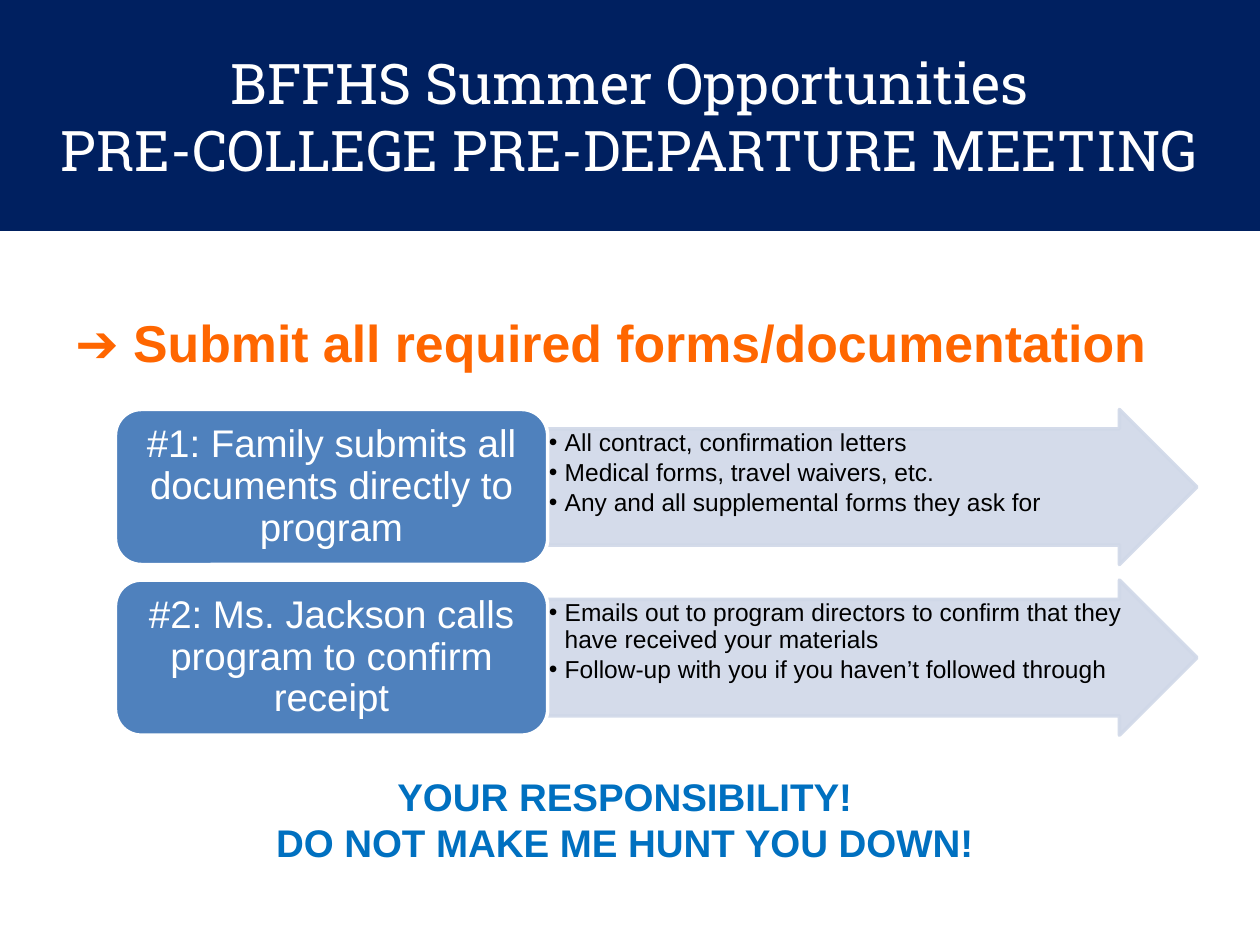
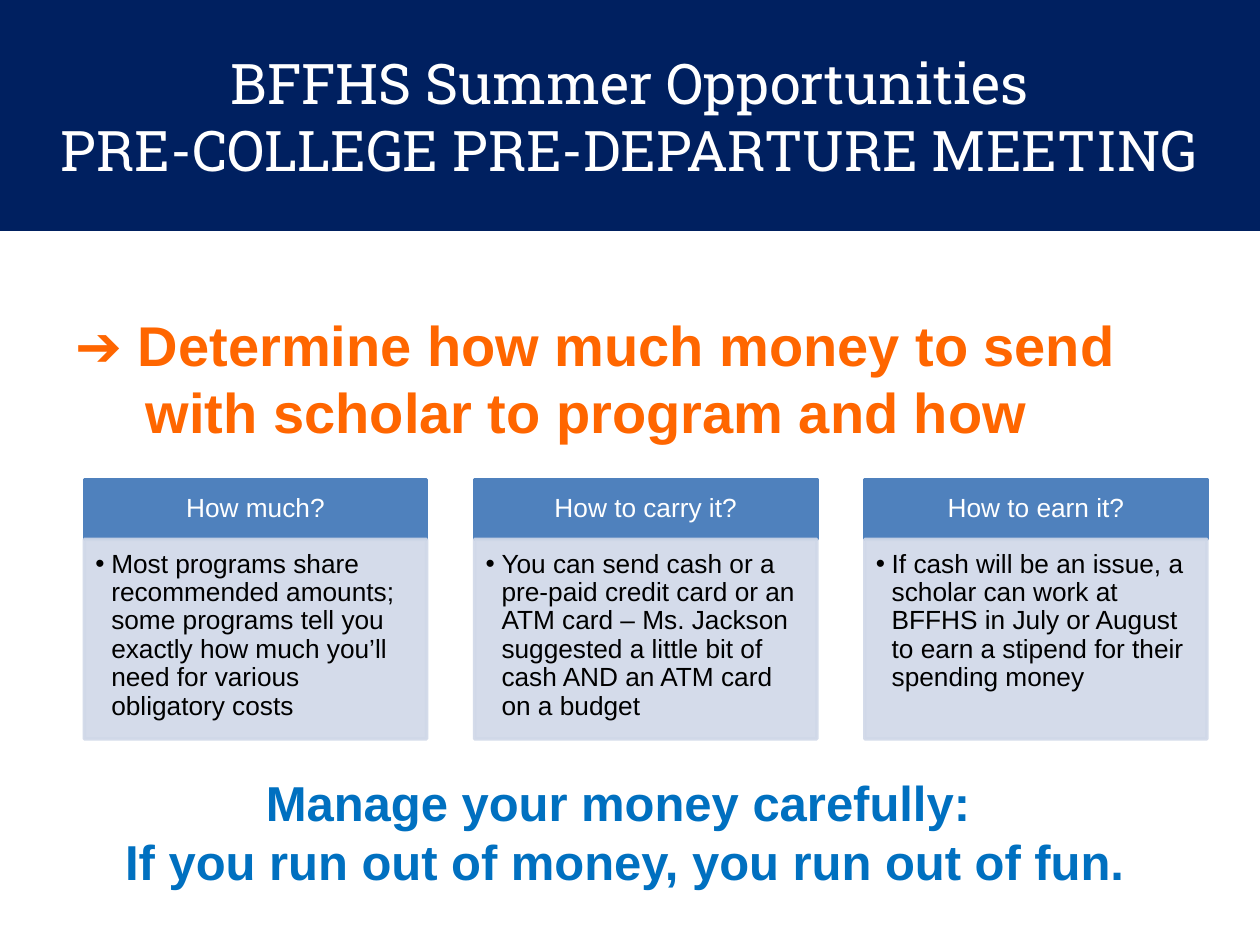
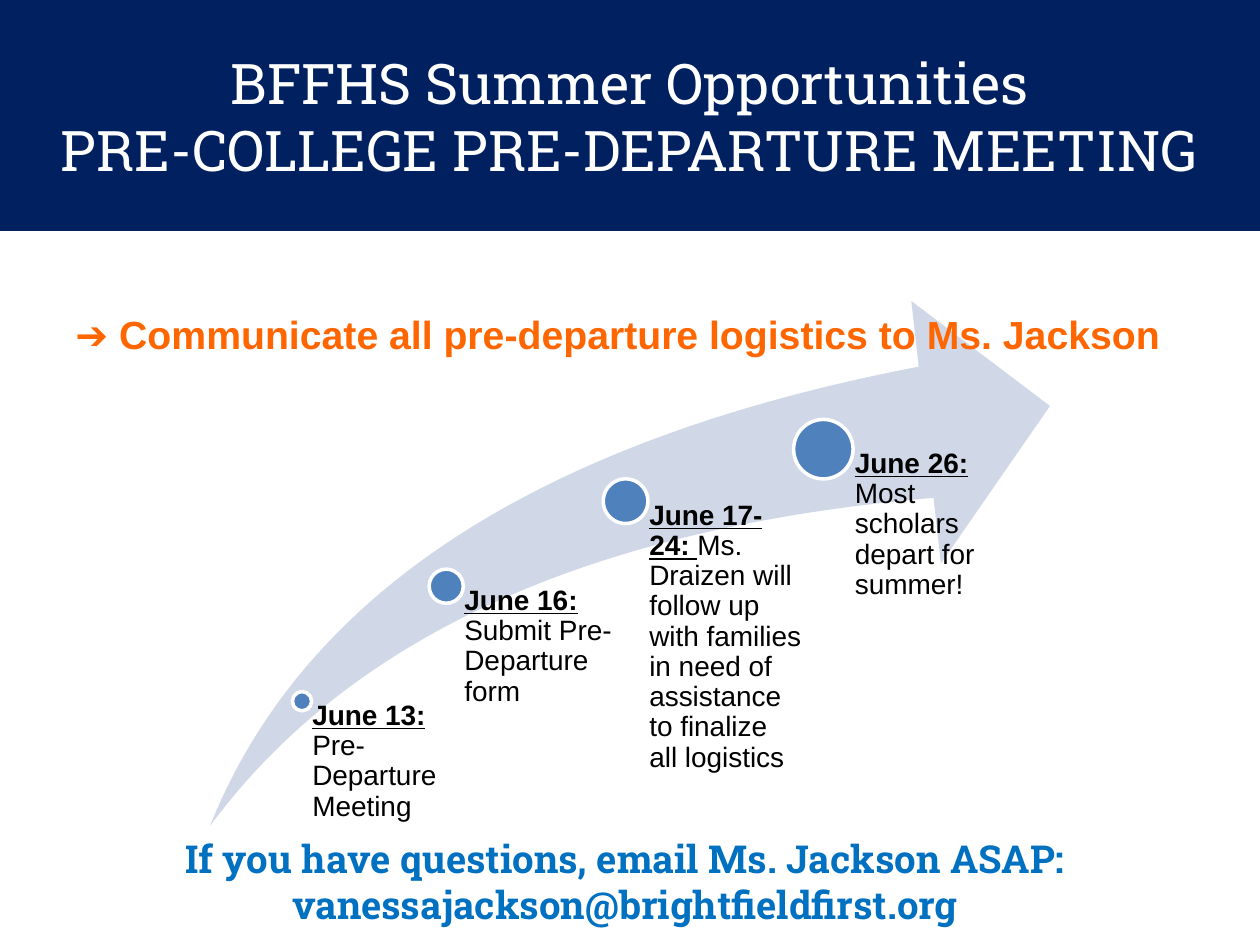
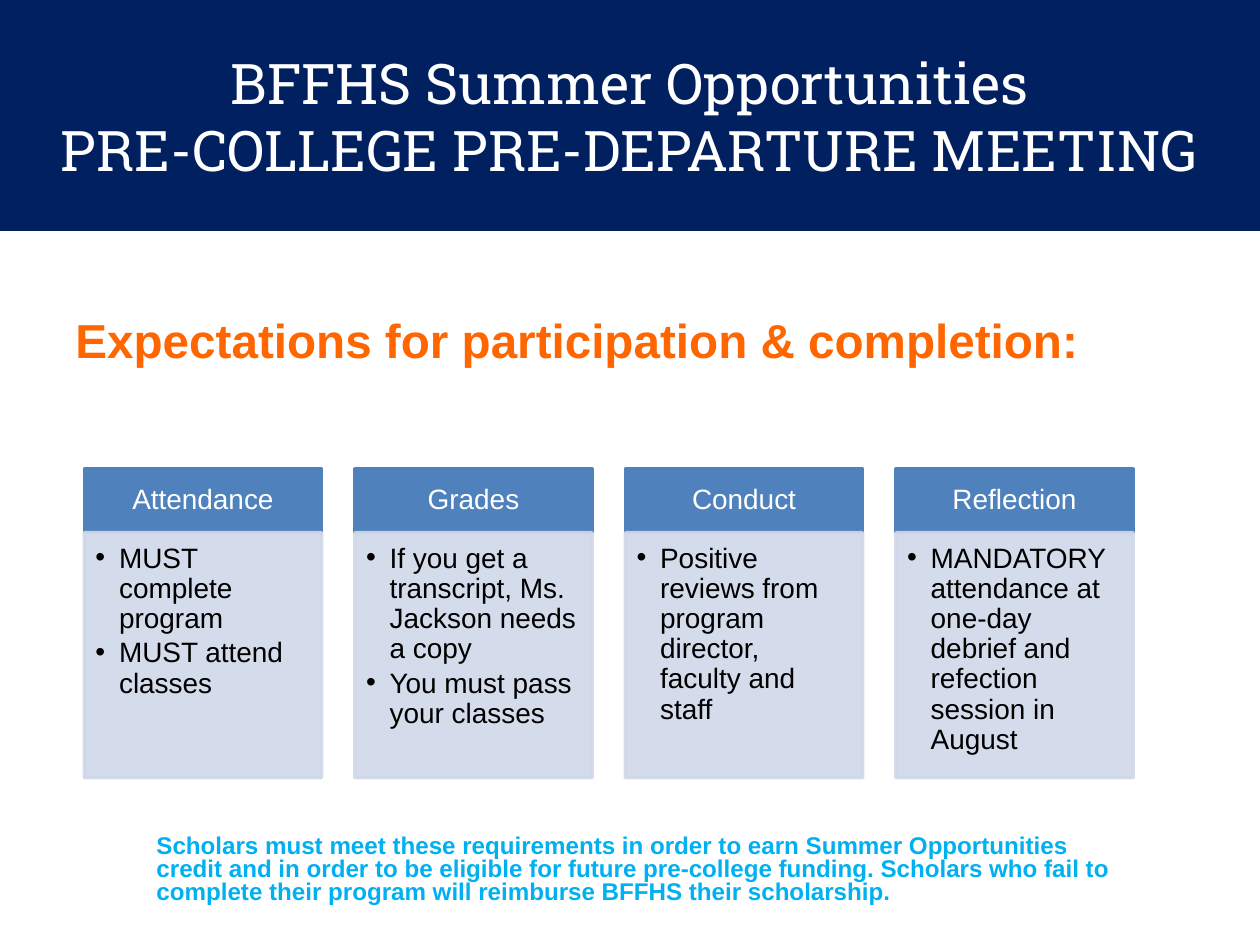
"""Build the four pre-departure meeting slides."""
from dataclasses import dataclass

from lxml.etree import SubElement
from pptx import Presentation
from pptx.dml.color import RGBColor
from pptx.enum.shapes import MSO_SHAPE as Preset
from pptx.enum.text import MSO_ANCHOR as Anchor, PP_ALIGN as Align
from pptx.oxml.ns import qn
from pptx.util import Pt


@dataclass(frozen=True)
class Theme:
    """Colours, fonts and type sizes used on every slide."""
    navy: str = "002060"
    orange: str = "FF6600"
    blue: str = "0070C0"
    sky: str = "00B0F0"
    steel: str = "4F81BD"
    pale: str = "D0D8E8"
    white: str = "FFFFFF"
    black: str = "000000"
    body_font: str = "Arial"
    slab_font: str = "Roboto Slab"
    title_size: float = 32
    step_size: float = 22
    detail_size: float = 14
    closing_size: float = 22
    milestone_size: float = 16
    note_size: float = 13.8
    line_width: float = 2
    panel_opacity: int = 90


THEME = Theme()
TITLE = "BFFHS Summer Opportunities\vPRE-COLLEGE PRE-DEPARTURE MEETING"
HANGING = 40.3
CARD_LEFT = 48.2
CARD_PITCH = 1.14
LABEL_BOTTOM = 472

STEPS = [
    ("#1: Family submits all documents directly to program",
     ["All contract, confirmation letters",
      "Medical forms, travel waivers, etc.",
      "Any and all supplemental forms they ask for"]),
    ("#2: Ms. Jackson calls program to confirm receipt",
     ["Emails out to program directors to confirm that they have received your materials",
      "Follow-up with you if you haven’t followed through"]),
]
MONEY_CARDS = [
    ("How much?",
     ["Most programs share recommended amounts; some programs tell you exactly "
      "how much you’ll need for various obligatory costs"]),
    ("How to carry it?",
     ["You can send cash or a pre-paid credit card or an ATM card – Ms. Jackson "
      "suggested a little bit of cash AND an ATM card on a budget"]),
    ("How to earn it?",
     ["If cash will be an issue, a scholar can work at BFFHS in July or August "
      "to earn a stipend for their spending money"]),
]
MILESTONES = [
    (172.6, 400.7, 11, 82, "June 13: ", "Pre-Departure Meeting"),
    (255, 335, 19.5, 101, "June 16: ", "Submit Pre-Departure form"),
    (357.5, 286.4, 25.5, 101, "June 17-24: ",
     "Ms. Draizen will follow up with families in need of assistance to finalize all logistics"),
    (470.5, 256.7, 34, 101, "June 26: ", "Most scholars depart for summer!"),
]
EXPECTATION_CARDS = [
    ("Attendance", ["MUST complete program", "MUST attend classes"]),
    ("Grades", ["If you get a transcript, Ms. Jackson needs a copy",
                "You must pass your classes"]),
    ("Conduct", ["Positive reviews from program director, faculty and staff"]),
    ("Reflection", ["MANDATORY attendance at one-day debrief and refection session in August"]),
]
NOTE = ("Scholars must meet these requirements in order to earn Summer Opportunities "
        "credit and in order to be eligible for future pre-college funding. Scholars "
        "who fail to complete their program will reimburse BFFHS their scholarship.")


def apply_format(target, values):
    """Set each named attribute of the target."""
    for name, value in values.items():
        setattr(target, name, value)


def set_opacity(color_format, percent):
    """Make a solid fill partly transparent."""
    color = color_format._xPr.find(qn("a:solidFill"))[0]
    SubElement(color, qn("a:alpha"), val=str(percent * 1000))


def add_figure(slide, preset, box, fill, line=None, opacity=None):
    """Add a flat preset shape."""
    shape = slide.shapes.add_shape(preset, *map(Pt, box))
    shape.shadow.inherit = False
    shape.fill.solid()
    shape.fill.fore_color.rgb = RGBColor.from_string(fill)
    if line:
        shape.line.color.rgb = RGBColor.from_string(line)
        shape.line.width = Pt(THEME.line_width)
    else:
        shape.line.fill.background()
    if opacity:
        set_opacity(shape.fill, opacity)
        set_opacity(shape.line.fill, opacity)
    return shape


def set_indent(paragraph, left, first, bullet=False):
    """Indent a paragraph and give it a bullet if asked."""
    properties = paragraph._p.get_or_add_pPr()
    properties.set("marL", str(Pt(left)))
    properties.set("indent", str(Pt(first)))
    if bullet:
        SubElement(properties, qn("a:buFont"), typeface=THEME.body_font)
        SubElement(properties, qn("a:buChar"), char="•")


def write(shape, lines, size, color, font=THEME.body_font, bold=False,
          anchor=Anchor.TOP, insets=(7.2, 3.6, 7.2, 3.6), indent=None,
          bullet=False, **paragraph_format):
    """Write one paragraph per line; a line is a string or a list of strings."""
    frame = shape.text_frame
    sides = ("margin_left", "margin_top", "margin_right", "margin_bottom")
    apply_format(frame, {"word_wrap": True, "vertical_anchor": anchor,
                         **dict(zip(sides, map(Pt, insets)))})
    for index, line in enumerate(lines):
        paragraph = frame.add_paragraph() if index else frame.paragraphs[0]
        if isinstance(line, str):
            paragraph.text = line
        else:
            for part in line:
                paragraph.add_run().text = part
        apply_format(paragraph, {"alignment": Align.LEFT, **paragraph_format})
        if indent:
            set_indent(paragraph, *indent, bullet)
        for run in paragraph.runs:
            apply_format(run.font, {"name": font, "size": Pt(size), "bold": bold})
            run.font.color.rgb = RGBColor.from_string(color)
    return frame


def add_text(slide, box, lines, size, color, **options):
    """Add a text box."""
    return write(slide.shapes.add_textbox(*map(Pt, box)), lines, size, color, **options)


def add_heading(slide, text, size, height=48):
    """Add the title band and the orange heading under it."""
    band = add_figure(slide, Preset.RECTANGLE, (0, 0, 720, 132), THEME.navy)
    write(band, [TITLE], THEME.title_size, THEME.white, font=THEME.slab_font,
          anchor=Anchor.MIDDLE, alignment=Align.CENTER)
    add_text(slide, (36, 174, 642, height), [text], size, THEME.orange,
             bold=True, indent=(HANGING, -HANGING))


def add_closing(slide, box, lines, size=THEME.closing_size, font=THEME.body_font):
    """Add the centred blue closing lines."""
    add_text(slide, box, lines, size, THEME.blue, font=font, bold=True,
             alignment=Align.CENTER)


def add_label(shape, text, size, insets):
    """Write a centred white label in a shape."""
    write(shape, [text], size, THEME.white, anchor=Anchor.MIDDLE, insets=insets,
          alignment=Align.CENTER, line_spacing=0.9)


def add_bullets(slide, preset, box, lines, size, insets, hanging):
    """Add a pale panel that holds bulleted lines."""
    panel = add_figure(slide, preset, box, THEME.pale, THEME.pale, THEME.panel_opacity)
    write(panel, lines, size, THEME.black, insets=insets, indent=(hanging, -hanging),
          bullet=True, line_spacing=0.9, space_after=Pt(round(size * 0.15, 1)))
    return panel


def add_step(slide, top, label, details):
    """Add a rounded step box with an arrow of details."""
    arrow = add_bullets(slide, Preset.RIGHT_ARROW, (313, top, 371, 88.6), details,
                        THEME.detail_size, (0.7, 0.7, 0.7, 0.7), 9)
    arrow.adjustments[0] = 0.75
    box = add_figure(slide, Preset.ROUNDED_RECTANGLE, (66, top, 247, 88.6),
                     THEME.steel, THEME.white)
    add_label(box, label, THEME.step_size, (6.6, 3.3, 6.6, 3.3))


def add_cards(slide, cards, top, width, header_height, body_height, size, hanging):
    """Add a row of equal cards, each a header over bullets."""
    for index, (label, lines) in enumerate(cards):
        left = CARD_LEFT + index * width * CARD_PITCH
        header = add_figure(slide, Preset.RECTANGLE, (left, top, width, header_height),
                            THEME.steel, THEME.steel)
        add_label(header, label, size, (8.4, 4.8, 8.4, 4.8))
        add_bullets(slide, Preset.RECTANGLE,
                    (left, top + header_height, width, body_height),
                    lines, size, (6.4, 6.4, 8.5, 9.6), hanging)


def add_milestone(slide, center_x, center_y, diameter, width, date, event):
    """Add a dot with its dated label below and to the right."""
    radius = diameter / 2
    add_figure(slide, Preset.OVAL,
               (center_x - radius, center_y - radius, diameter, diameter),
               THEME.steel, THEME.white)
    frame = add_text(slide, (center_x, center_y, width, LABEL_BOTTOM - center_y),
                     [[date, event]], THEME.milestone_size, THEME.black,
                     insets=(diameter * 0.53, 0, 0, 0), line_spacing=0.9)
    apply_format(frame.paragraphs[0].runs[0].font, {"bold": True, "underline": True})


def build_forms_slide(slide):
    """Show who submits and who confirms the forms."""
    add_heading(slide, "➔ Submit all required forms/documentation", 29.6)
    for index, (label, details) in enumerate(STEPS):
        add_step(slide, 234 + index * 97.5, label, details)
    add_closing(slide, (60, 438, 594, 60.5),
                ["YOUR RESPONSIBILITY!", "DO NOT MAKE ME HUNT YOU DOWN!"])


def build_money_slide(slide):
    """Show the three money questions."""
    add_heading(slide, "➔ Determine how much money to send with scholar to program and how",
                32, 84)
    add_closing(slide, (60, 438, 594, 75),
                ["Manage your money carefully: ",
                 "If you run out of money, you run out of fun."], 28)
    add_cards(slide, MONEY_CARDS, 274, 195.6, 34.2, 114, 15, 9)


def build_logistics_slide(slide):
    """Show the dates along a rising arrow."""
    swoosh = add_figure(slide, Preset.SWOOSH_ARROW, (120, 172, 480, 300), THEME.pale)
    for index in range(2):
        swoosh.adjustments[index] = 0.25
    for milestone in MILESTONES:
        add_milestone(slide, *milestone)
    add_heading(slide, "➔ Communicate all pre-departure logistics to Ms. Jackson", 22.4)
    add_closing(slide, (18, 473.6, 678, 60.5),
                ["If you have questions, email Ms. Jackson ASAP:",
                 "vanessajackson@brightfieldfirst.org"], font=THEME.slab_font)


def build_expectations_slide(slide):
    """Show the four expectations and the note on funding."""
    add_heading(slide, "Expectations for participation & completion:", 27.2)
    add_cards(slide, EXPECTATION_CARDS, 268, 135.6, 36.4, 140, 16, 13.5)
    add_text(slide, (42, 474, 600, 54), [NOTE], THEME.note_size, THEME.sky,
             bold=True, indent=(HANGING, 0), line_spacing=0.8)


def main():
    """Build and save the presentation."""
    presentation = Presentation()
    apply_format(presentation, {"slide_width": Pt(720), "slide_height": Pt(540)})
    for build in (build_forms_slide, build_money_slide,
                  build_logistics_slide, build_expectations_slide):
        build(presentation.slides.add_slide(presentation.slide_layouts[6]))
    presentation.save("out.pptx")


if __name__ == "__main__":
    main()
